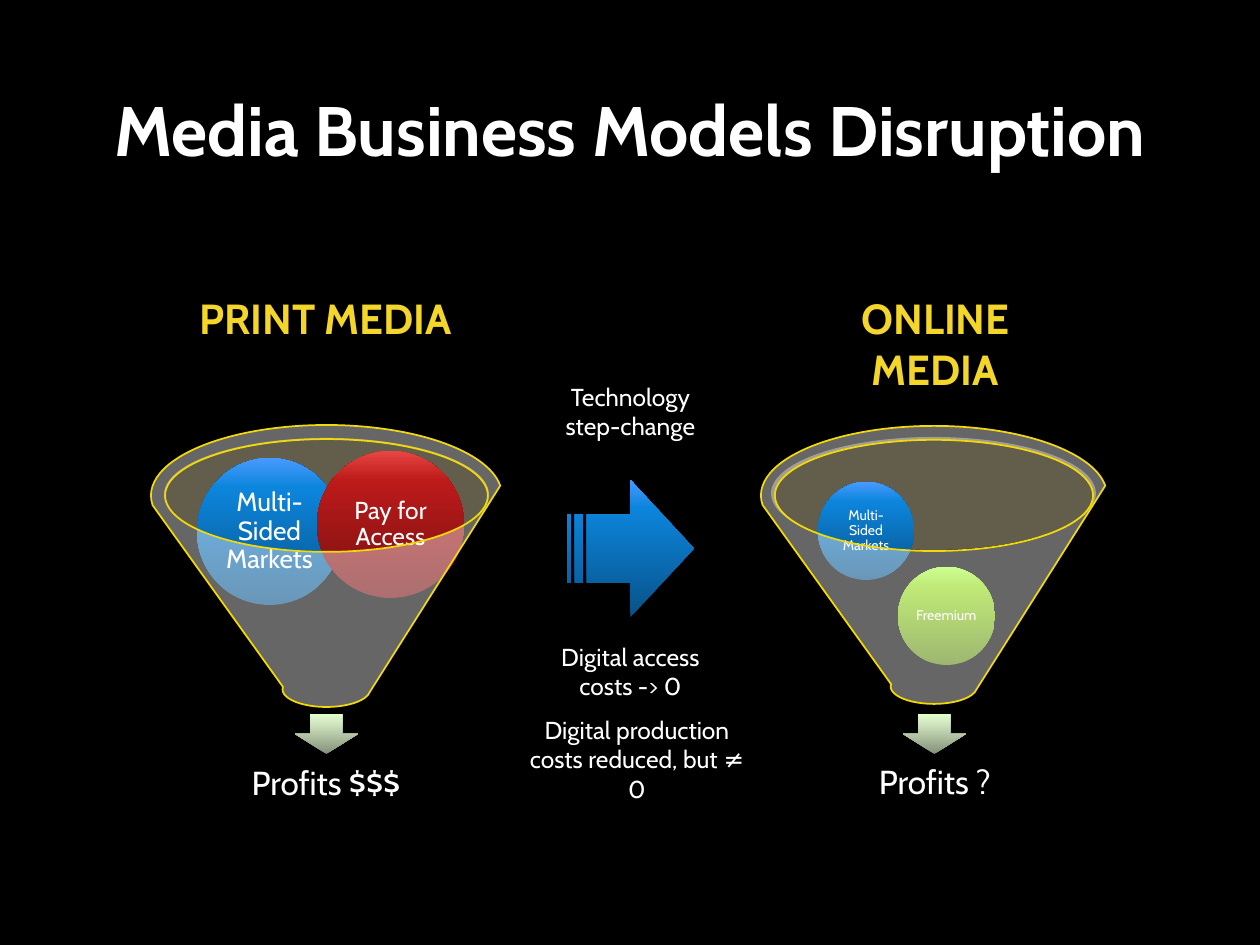
from lxml import etree
from pptx import Presentation
from pptx.dml.color import RGBColor
from pptx.enum.shapes import MSO_SHAPE
from pptx.enum.text import MSO_ANCHOR, PP_ALIGN
from pptx.oxml.ns import qn
from pptx.util import Pt

PX = 914400 // 126
ELLIPSE, FUNNEL = MSO_SHAPE.OVAL, MSO_SHAPE.FUNNEL
DOWN, STRIPED = MSO_SHAPE.DOWN_ARROW, MSO_SHAPE.STRIPED_RIGHT_ARROW
CENTER, TOP, MIDDLE = PP_ALIGN.CENTER, MSO_ANCHOR.TOP, MSO_ANCHOR.MIDDLE

COLORS = {"black": "000000", "white": "FFFFFF", "cream": "F9EDBD",
          "yellow": "F2D908", "gold": "F4D62A"}
GRADIENTS = {
    "blue": ("085288", "0C85DC", "489AFF"),
    "red": ("751010", "BD1A1A", "E84545"),
    "green": ("5D8812", "96DC1D", "ACFF4A"),
    "pale": ("849179", "D5EAC3", "E1FFCA"),
}
STOPS = (0, 80, 100)

TITLE = ("Media Business Models Disruption", (93, 15, 1074, 228))
FUNNELS = [
    {"heading": ("PRINT MEDIA", (175, 287, 301, 63)),
     "rim": (164, 438, 325, 113), "cone": (151, 425, 351, 282),
     "arrow": (295, 714, 63, 40), "profit": ("Profits $$$", (175, 747, 302, 76)),
     "balls": [("Multi-Sided Markets", "blue", 15, (197, 458, 145, 147)),
               ("Pay for Access", "red", 14, (317, 451, 147, 147))]},
    {"heading": ("ONLINE MEDIA", (785, 287, 301, 63)),
     "rim": (771, 437, 325, 113), "cone": (761, 426, 346, 278),
     "arrow": (903, 714, 63, 40), "profit": ("Profits ?", (784, 746, 302, 76)),
     "balls": [("Freemium", "green", 8, (898, 567, 97, 98)),
               ("Multi-Sided Markets", "blue", 8, (818, 482, 96, 98))]},
]
SHIFT_ARROW = (567, 480, 127, 137)
SHIFT_NOTES = [
    ("Digital access costs -> 0", (541, 636, 179, 72)),
    ("Technology\nstep-change", (541, 376, 179, 72)),
    ("Digital production costs reduced, but ≠ 0", (507, 709, 260, 72)),
]


def emu(rect):
    return [value * PX for value in rect]


def color(name):
    return RGBColor.from_string(COLORS[name])


def add_text(shapes, text, rect, size, ink="white", bold=False,
             anchor=TOP, spacing=1.0, inset=(13, 6)):
    frame = shapes.add_textbox(*emu(rect)).text_frame
    across, down = (value * PX for value in inset)
    settings = {"word_wrap": True, "vertical_anchor": anchor,
                "margin_left": across, "margin_right": across,
                "margin_top": down, "margin_bottom": down}
    for name, value in settings.items():
        setattr(frame, name, value)
    frame.text = text
    for para in frame.paragraphs:
        para.alignment = CENTER
        para.line_spacing = spacing
        for span in para.runs:
            for name, value in {"name": "Cabin", "size": Pt(size), "bold": bold}.items():
                setattr(span.font, name, value)
            span.font.color.rgb = color(ink)


def add_shape(shapes, kind, rect):
    shape = shapes.add_shape(kind, *emu(rect))
    shape.shadow.inherit = False
    shape.line.fill.background()
    return shape


def add_glass(shapes, kind, rect, name):
    shape = add_shape(shapes, kind, rect)
    shape.fill.solid()
    shape.fill.fore_color.rgb = color(name)
    tint = shape.fill._xPr.find(qn("a:solidFill"))[0]
    etree.SubElement(tint, qn("a:alpha"), val="40000")
    return shape


def add_shaded(shapes, kind, rect, name):
    shape = add_shape(shapes, kind, rect)
    shape.fill.gradient()
    gradient = shape.fill._xPr.find(qn("a:gradFill"))
    stops = gradient.find(qn("a:gsLst"))
    for stop in list(stops):
        stops.remove(stop)
    for place, value in zip(STOPS, GRADIENTS[name]):
        stop = etree.SubElement(stops, qn("a:gs"), pos=str(place * 1000))
        etree.SubElement(stop, qn("a:srgbClr"), val=value)
    shape.fill.gradient_angle = 90


def add_funnel(page, funnel):
    shapes = page.shapes.add_group_shape().shapes
    add_glass(shapes, ELLIPSE, funnel["rim"], "cream")
    add_shaded(shapes, DOWN, funnel["arrow"], "pale")
    add_text(shapes, *funnel["profit"], 19, anchor=MIDDLE, spacing=0.9, inset=(19, 19))
    for label, name, size, rect in funnel["balls"]:
        add_shaded(shapes, ELLIPSE, rect, name)
        left, top, width, height = rect
        pad = round(width * 0.146)
        inner = (left + pad, top + pad, width - 2 * pad, height - 2 * pad)
        add_text(shapes, label, inner, size, anchor=MIDDLE, spacing=0.9, inset=(2, 2))
    cone = add_glass(shapes, FUNNEL, funnel["cone"], "white")
    cone.line.color.rgb = color("yellow")
    cone.line.width = Pt(1)


def main():
    deck = Presentation()
    deck.slide_width, deck.slide_height = emu((1260, 945))
    page = deck.slides.add_slide(deck.slide_layouts[6])
    page.background.fill.solid()
    page.background.fill.fore_color.rgb = color("black")

    add_text(page.shapes, *TITLE, 40, bold=True, anchor=MIDDLE)
    for funnel in FUNNELS:
        add_funnel(page, funnel)
    for funnel in FUNNELS:
        add_text(page.shapes, *funnel["heading"], 24, "gold", True)

    shift = page.shapes.add_group_shape().shapes
    add_shaded(shift, STRIPED, SHIFT_ARROW, "blue")
    for text, rect in SHIFT_NOTES:
        add_text(shift, text, rect, 14)
    deck.save("out.pptx")


if __name__ == "__main__":
    main()
